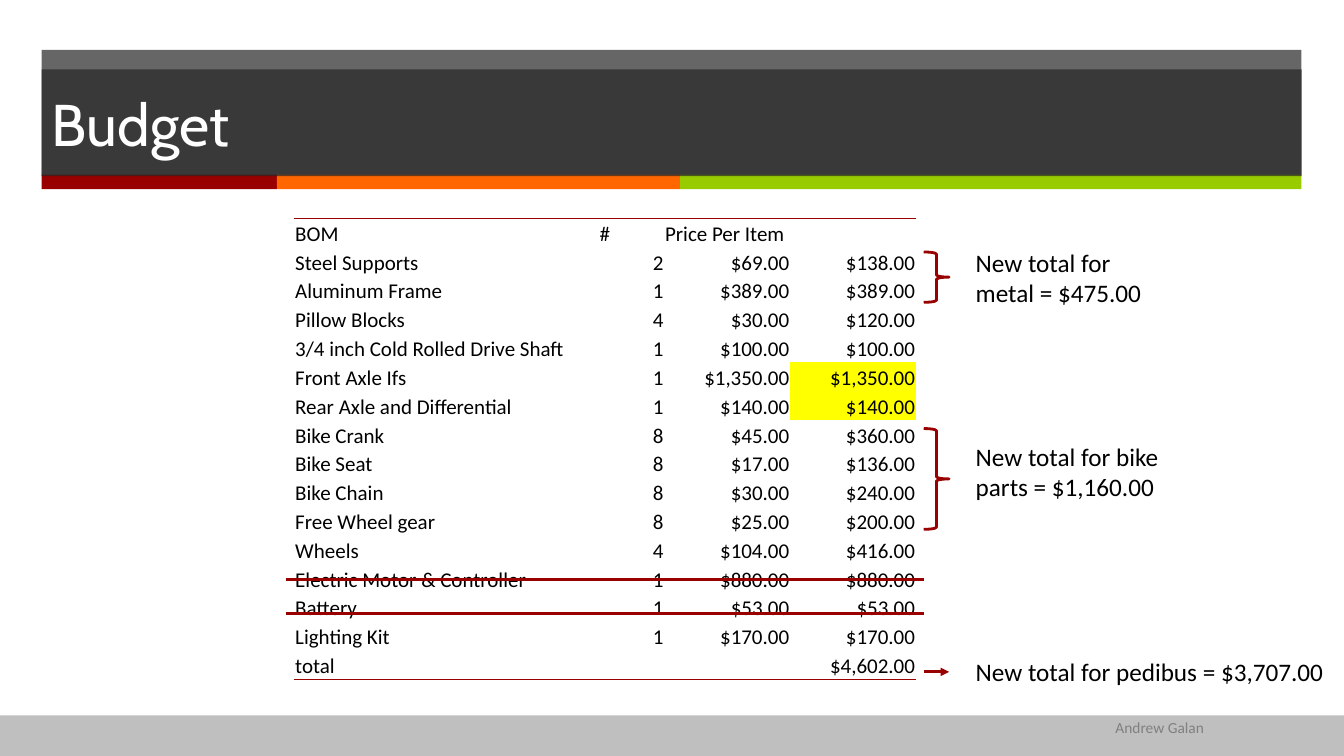
from lxml import etree
from pptx import Presentation
from pptx.dml.color import RGBColor
from pptx.enum import shapes, text
from pptx.oxml import ns
from pptx.util import Cm, Pt

RED, YELLOW = "990000", "FFFF00"
NO_GRID = "{2D5ABB26-0587-4C30-8999-92F81FD0307C}"

# name, count, price per item
PARTS = [
    ("Steel Supports", 2, 69),
    ("Aluminum Frame", 1, 389),
    ("Pillow Blocks", 4, 30),
    ("3/4 inch Cold Rolled Drive Shaft", 1, 100),
    ("Front Axle Ifs", 1, 1350),
    ("Rear Axle and Differential", 1, 140),
    ("Bike Crank", 8, 45),
    ("Bike Seat", 8, 17),
    ("Bike Chain", 8, 30),
    ("Free Wheel gear", 8, 25),
    ("Wheels", 4, 104),
    ("Electric Motor & Controller", 1, 880),
    ("Battery", 1, 53),
    ("Lighting Kit", 1, 170),
]
MARKED = (5, 6)  # table rows with a yellow total


def paint(fill, hue, alpha=None):
    fill.solid()
    fill.fore_color.rgb = RGBColor.from_string(hue)
    if alpha:
        node = fill._xPr.find(".//" + ns.qn("a:srgbClr"))
        etree.SubElement(node, ns.qn("a:alpha"), val=str(alpha * 1000))


def style(para, size, hue="000000", face="Calibri", align=text.PP_ALIGN.LEFT):
    para.alignment = align
    para.font.size = Pt(size)
    para.font.name = face
    para.font.color.rgb = RGBColor.from_string(hue)


def bar(slide, x, y, w, h, hue, alpha=None):
    box = slide.shapes.add_shape(
        shapes.MSO_SHAPE.RECTANGLE, Cm(x), Cm(y), Cm(w), Cm(h))
    box.shadow.inherit = False
    box.line.fill.background()
    paint(box.fill, hue, alpha)


def head(slide, words):
    title = slide.shapes.title
    title.left, title.top, title.width, title.height = (
        Cm(1.05), Cm(1.75), Cm(31.75), Cm(2.69))
    paint(title.fill, "262626", 70)
    frame = title.text_frame
    frame.text = words
    frame.auto_size = text.MSO_AUTO_SIZE.NONE
    frame.vertical_anchor = text.MSO_ANCHOR.MIDDLE
    style(frame.paragraphs[0], 42, "FFFFFF", "Cabin")
    slide.shapes._spTree.append(title._element)  # in front of the bars


def note(slide, x, y, w, h, words, size=18, hue="000000", wrap=True):
    frame = slide.shapes.add_textbox(Cm(x), Cm(y), Cm(w), Cm(h)).text_frame
    frame.word_wrap = wrap
    frame.text = words
    style(frame.paragraphs[0], size, hue)


def brace(slide, y, h):
    mark = slide.shapes.add_shape(
        shapes.MSO_SHAPE.RIGHT_BRACE, Cm(23.28), Cm(y), Cm(0.64), Cm(h))
    mark.shadow.inherit = False
    mark.fill.background()
    mark.line.color.rgb = RGBColor.from_string(RED)
    mark.line.width = Pt(2)


def rule(slide, x, end, y, arrow=False):
    line = slide.shapes.add_connector(
        shapes.MSO_CONNECTOR.STRAIGHT, Cm(x), Cm(y), Cm(end), Cm(y))
    line.line.color.rgb = RGBColor.from_string(RED)
    line.line.width = Pt(2)
    if arrow:
        etree.SubElement(line.line._ln, ns.qn("a:tailEnd"), type="triangle")
    etree.SubElement(line._element.spPr, ns.qn("a:effectLst"))


def edge(cell, side):
    line = etree.Element(ns.qn("a:ln" + side), w=str(Pt(1)))
    fill = etree.SubElement(line, ns.qn("a:solidFill"))
    etree.SubElement(fill, ns.qn("a:srgbClr"), val=RED)
    cell._tc.get_or_add_tcPr().insert(0, line)


def bill(slide):
    rows = [("BOM", "", "#", "Price Per Item", "")]
    rows += [(name, "", str(n), f"${cost}.00" if cost < 1000 else f"${cost:,}.00",
              f"${n * cost:,}.00") for name, n, cost in PARTS]
    rows.append(("total", "", "", "", "$4,602.00"))
    table = slide.shapes.add_table(
        len(rows), 5, Cm(7.42), Cm(5.5), Cm(15.66), Cm(11.63)).table
    table.first_row = table.horz_banding = False
    table._tbl.tblPr.find(ns.qn("a:tableStyleId")).text = NO_GRID
    for col, w in zip(table.columns, (7.26, 0.41, 1.65, 3.17, 3.17)):
        col.width = Cm(w)
    for r, row in enumerate(rows):
        for c, words in enumerate(row):
            cell = table.cell(r, c)
            cell.margin_left = cell.margin_right = cell.margin_top = Cm(0.02)
            cell.margin_bottom = 0
            cell.vertical_anchor = text.MSO_ANCHOR.BOTTOM
            cell.text = words
            right = r > 0 and c > 1
            style(cell.text_frame.paragraphs[0], 15,
                  align=text.PP_ALIGN.RIGHT if right else text.PP_ALIGN.LEFT)
            if c == 4 and r in MARKED:
                paint(cell.fill, YELLOW)
            else:
                cell.fill.background()
            if r == 0:
                edge(cell, "T")
            elif r == len(rows) - 1:
                edge(cell, "B")
    table.cell(0, 3).merge(table.cell(0, 4))


def main():
    deck = Presentation()
    deck.slide_width, deck.slide_height = Cm(33.87), Cm(19.05)
    slide = deck.slides.add_slide(deck.slide_layouts[5])

    # Footer band, header and colour strip
    bar(slide, 0, 18.03, 33.87, 1.02, "BFBFBF")
    bar(slide, 1.05, 1.26, 31.75, 3.16, "262626", 70)
    x = 1.05
    for w, hue in ((5.93, RED), (10.16, "FF6600"), (15.66, "99CC00")):
        bar(slide, x, 4.4, w, 0.37, hue)
        x += w
    head(slide, "Budget")
    note(slide, 27.86, 17.96, 3.5, 0.73, "Andrew Galan", 11, "808080")

    # Bill of materials with struck-out rows
    bill(slide)
    for y in (14.61, 15.45):
        rule(slide, 7.2, 23.28, y)

    # New totals
    brace(slide, 6.35, 1.27)
    note(slide, 24.34, 6.1, 4.87, 1.8, "New total for metal = $475.00")
    brace(slide, 10.8, 2.54)
    note(slide, 24.34, 11, 5.5, 1.8, "New total for bike parts = $1,160.00")
    rule(slide, 23.28, 23.92, 16.93, arrow=True)
    note(slide, 24.34, 16.42, 9.37, 1.03,
         "New total for pedibus = $3,707.00", wrap=False)

    deck.save("out.pptx")


if __name__ == "__main__":
    main()
